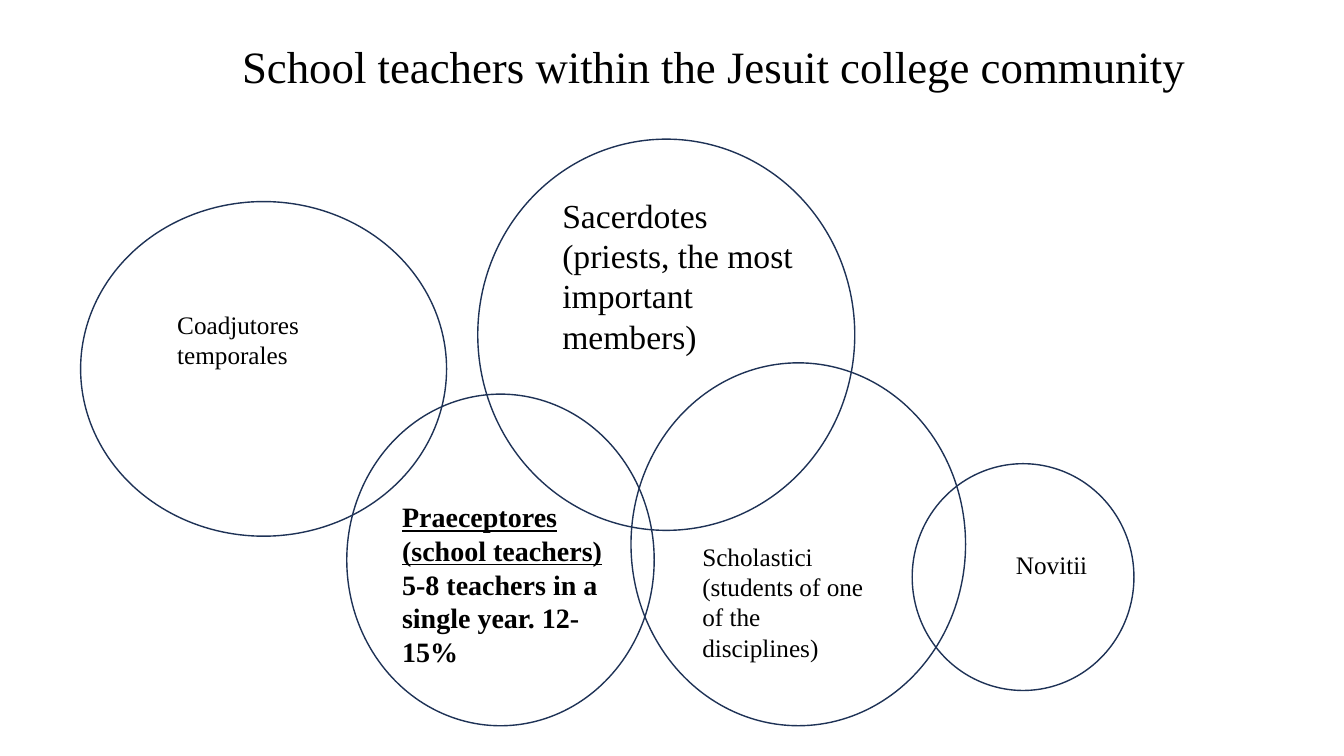
import pptx
import pptx.dml.color
import pptx.enum.shapes
import pptx.enum.text
import pptx.util

Pt = pptx.util.Pt
FONT = "Times New Roman"
INK = "000000"
OUTLINE = "1E3256"
TITLE = "School teachers within the Jesuit college community"

# Each group: circle box, label box (left, top, width, height), font size,
# and paragraphs made of (text, format) runs.
GROUPS = [
    ((341.3, 99.4, 269.3, 279.4), (394.6, 135.4, 192.2, 123.8), 24,
     [[("Sacerdotes", {})], [("(priests, the most important members)", {})]]),
    ((247.7, 281.5, 219.6, 236.9), (280.1, 353.5, 164.2, 128.2), 20,
     [[("Praeceptores (school teachers) ", {"bold": True, "underline": True}),
       ("5-8 teachers in a single year. 12-15%", {"bold": True})]]),
    ((450.7, 259.2, 239, 259.2), (494.6, 383, 134.6, 94.3), 18,
     [[("Scholastici (students of one of the disciplines)", {})]]),
    ((57.6, 144, 261.4, 239), (119.5, 217.4, 154.8, 52.6), 18,
     [[("Coadjutores temporales", {})]]),
    ((651.6, 331.2, 158.4, 162), (718.6, 388.8, 74.9, 28.8), 18,
     [[("Novitii", {})]]),
]


def rgb(value):
    return pptx.dml.color.RGBColor.from_string(value)


def add_text(p, text, size=18, color=INK, bold=False, underline=False):
    r = p.add_run()
    r.text = text
    r.font.name = FONT
    r.font.size = Pt(size)
    r.font.color.rgb = rgb(color)
    r.font.bold = bold
    r.font.underline = underline


def place_title(slide, left, top, width, height):
    sp = slide.shapes.title
    sp.left, sp.top, sp.width, sp.height = map(Pt, (left, top, width, height))
    tf = sp.text_frame
    tf.auto_size = pptx.enum.text.MSO_AUTO_SIZE.NONE
    tf.vertical_anchor = pptx.enum.text.MSO_ANCHOR.TOP
    p = tf.paragraphs[0]
    p.alignment = pptx.enum.text.PP_ALIGN.CENTER
    add_text(p, TITLE, size=32)


def add_circle(slide, box):
    sp = slide.shapes.add_shape(pptx.enum.shapes.MSO_SHAPE.OVAL, *map(Pt, box))
    sp.shadow.inherit = False
    sp.fill.background()
    sp.line.color.rgb = rgb(OUTLINE)
    sp.line.width = Pt(1)


def add_label(slide, box, size, paragraphs):
    tf = slide.shapes.add_textbox(*map(Pt, box)).text_frame
    tf.word_wrap = True
    tf.auto_size = pptx.enum.text.MSO_AUTO_SIZE.SHAPE_TO_FIT_TEXT
    for i, runs in enumerate(paragraphs):
        p = tf.add_paragraph() if i else tf.paragraphs[0]
        for text, style in runs:
            add_text(p, text, size=size, **style)


def build_community_slide(prs):
    slide = prs.slides.add_slide(prs.slide_layouts.get_by_name("Title Only"))
    place_title(slide, 89.3, 23.8, 841.7, 46.1)
    for circle, label, size, paragraphs in GROUPS:
        add_circle(slide, circle)
        add_label(slide, label, size, paragraphs)


def main():
    prs = pptx.Presentation()
    prs.slide_width, prs.slide_height = Pt(960), Pt(540)
    build_community_slide(prs)
    prs.save("out.pptx")


if __name__ == "__main__":
    main()
